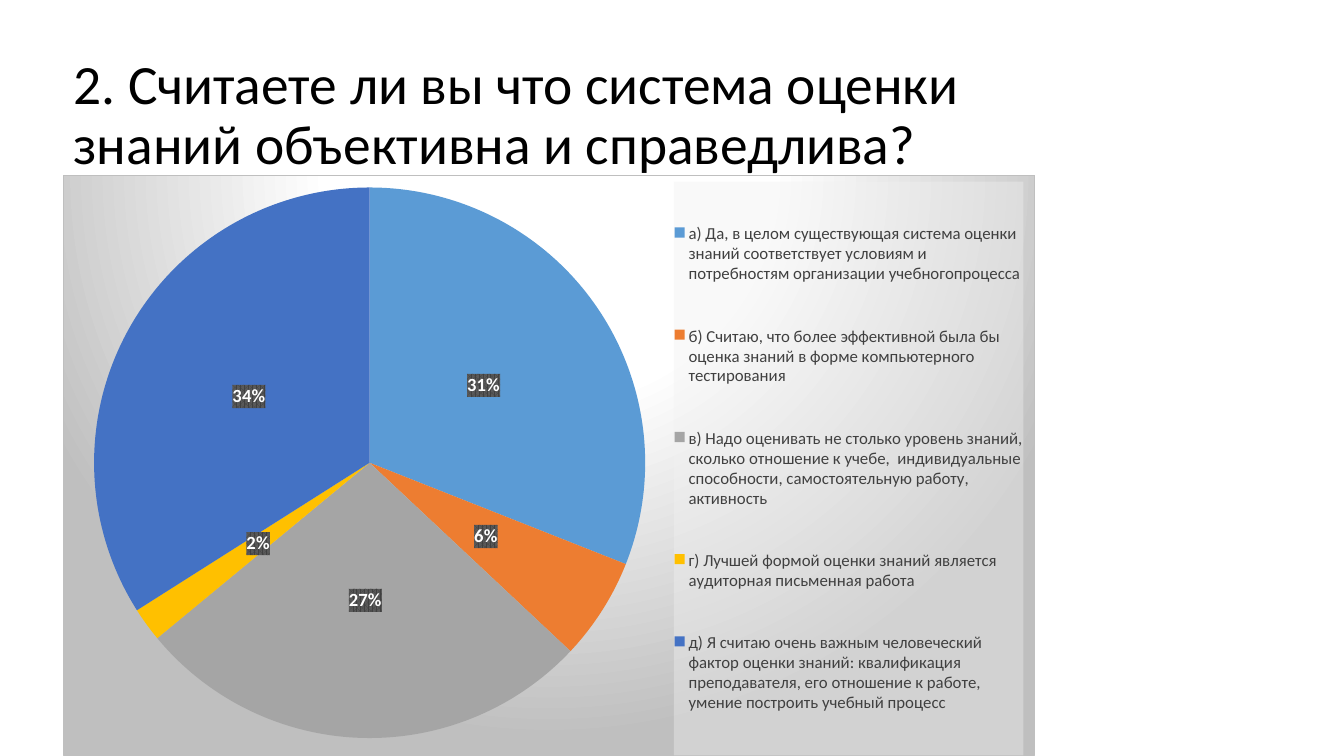
from dataclasses import dataclass

from pptx import Presentation
from pptx.chart.data import CategoryChartData
from pptx.dml.color import RGBColor
from pptx.enum.chart import XL_CHART_TYPE, XL_LABEL_POSITION, XL_LEGEND_POSITION
from pptx.enum.text import MSO_ANCHOR, MSO_AUTO_SIZE, PP_ALIGN
from pptx.oxml import parse_xml
from pptx.oxml.ns import nsdecls, qn
from pptx.util import Inches, Pt

PIE = XL_CHART_TYPE.PIE
LABEL_CENTER = XL_LABEL_POSITION.CENTER
LEGEND_RIGHT = XL_LEGEND_POSITION.RIGHT
MIDDLE = MSO_ANCHOR.MIDDLE
NO_AUTOFIT = MSO_AUTO_SIZE.NONE
LEFT = PP_ALIGN.LEFT
TITLE_ONLY = 5


@dataclass(frozen=True)
class Theme:
    font: str = "Calibri"
    text: str = "000000"
    legend_text: str = "404040"
    legend_fill: str = "F2F2F2"
    label_text: str = "FFFFFF"
    label_dark: str = "404040"
    label_light: str = "595959"
    panel_center: str = "FFFFFF"
    panel_edge: str = "BFBFBF"
    slices: tuple = ("5B9BD5", "ED7D31", "A5A5A5", "FFC000", "4472C4")
    title_size: float = 39.6
    chart_size: float = 10
    legend_size: float = 12
    label_size: float = 13.3


THEME = Theme()
SLIDE_WIDTH, SLIDE_HEIGHT = Inches(13.33), Inches(7.5)

TITLE_AREA = (4.72, 4.4, 69.9, 22)
CHART_AREA = (4.72, 23.2, 72.3, 76.8)
PIE_AREA = (0.03, 0.02, 0.57, 0.95)
LEGEND_AREA = (0.63, 0.01, 0.36, 0.99)

QUESTION = "2. Считаете ли вы что система оценки знаний объективна и справедлива?"
ANSWERS = {
    "а) Да, в целом существующая система оценки знаний соответствует условиям "
    "и потребностям организации учебногопроцесса": 31,
    "б) Считаю, что более эффективной была бы оценка знаний в форме "
    "компьютерного  тестирования": 6,
    "в) Надо оценивать не столько уровень знаний, сколько отношение к учебе,  "
    "индивидуальные способности, самостоятельную работу, активность": 27,
    "г) Лучшей формой оценки знаний является аудиторная письменная работа": 2,
    "д) Я считаю очень важным человеческий фактор оценки знаний: квалификация  "
    "преподавателя, его отношение к работе, умение построить учебный процесс": 34,
}


def place(area):
    sides = (SLIDE_WIDTH, SLIDE_HEIGHT) * 2
    return [round(side * percent / 100) for side, percent in zip(sides, area)]


def style_font(font, size, color, bold=False):
    font.name = THEME.font
    font.size = Pt(size)
    font.bold = bold
    font.color.rgb = RGBColor.from_string(color)


def solid(color, alpha=100):
    return (f'<a:solidFill><a:srgbClr val="{color}"><a:alpha val="{alpha * 1000}"/>'
            '</a:srgbClr></a:solidFill>')


def shape_format(content):
    return parse_xml(f'<c:spPr {nsdecls("c", "a")}>{content}</c:spPr>')


def manual_layout(area, inner=False):
    target = '<c:layoutTarget val="inner"/>' if inner else ""
    modes = "".join(f'<c:{side}Mode val="edge"/>' for side in "xy")
    shares = "".join(f'<c:{side} val="{share}"/>' for side, share in zip("xywh", area))
    return parse_xml(f'<c:layout {nsdecls("c")}><c:manualLayout>{target}{modes}{shares}'
                     '</c:manualLayout></c:layout>')


def remove_layout(parent):
    for layout in parent.findall(qn("c:layout")):
        parent.remove(layout)


def add_title(slide):
    title = slide.shapes.title
    title.left, title.top, title.width, title.height = place(TITLE_AREA)
    frame = title.text_frame
    frame.text = QUESTION
    frame.word_wrap = True
    frame.auto_size = NO_AUTOFIT
    frame.vertical_anchor = MIDDLE
    paragraph = frame.paragraphs[0]
    paragraph.alignment = LEFT
    paragraph.line_spacing = 0.9
    style_font(paragraph.runs[0].font, THEME.title_size, THEME.text)


def style_panel(chart):
    stops = ((0, THEME.panel_center), (39, THEME.panel_center), (100, THEME.panel_edge))
    gradient = "".join(f'<a:gs pos="{share * 1000}"><a:srgbClr val="{color}"/></a:gs>'
                       for share, color in stops)
    panel = shape_format(
        f'<a:gradFill><a:gsLst>{gradient}</a:gsLst><a:path path="circle">'
        '<a:fillToRect l="50000" t="-80000" r="50000" b="180000"/></a:path></a:gradFill>'
        f'<a:ln w="{Pt(0.75)}">{solid(THEME.panel_edge)}</a:ln>')
    chart.element.find(qn("c:chart")).addnext(panel)


def style_slices(plot):
    plot.vary_by_categories = True
    for index, color in enumerate(THEME.slices):
        fill = plot.series[0].points[index].format.fill
        fill.solid()
        fill.fore_color.rgb = RGBColor.from_string(color)


def style_labels(labels):
    labels.show_percentage = True
    labels.show_value = False
    labels.number_format = "0%"
    labels.number_format_is_linked = False
    labels.position = LABEL_CENTER
    style_font(labels.font, THEME.label_size, THEME.label_text, bold=True)


def style_legend(chart):
    chart.has_legend = True
    chart.legend.position = LEGEND_RIGHT
    chart.legend.include_in_layout = False
    style_font(chart.legend.font, THEME.legend_size, THEME.legend_text)
    legend = chart.element.find(".//" + qn("c:legend"))
    remove_layout(legend)
    legend.find(qn("c:legendPos")).addnext(manual_layout(LEGEND_AREA))
    legend.find(qn("c:txPr")).addprevious(shape_format(solid(THEME.legend_fill, 39)))


def add_answers_pie(slide):
    data = CategoryChartData()
    data.categories = list(ANSWERS)
    data.add_series("Series 1", list(ANSWERS.values()))
    chart = slide.shapes.add_chart(PIE, *place(CHART_AREA), data).chart
    chart.has_title = False
    style_font(chart.font, THEME.chart_size, THEME.text)
    style_panel(chart)
    style_legend(chart)

    plot = chart.plots[0]
    style_slices(plot)
    style_labels(plot.series[0].data_labels)
    label_box = shape_format(
        f'<a:pattFill prst="pct75"><a:fgClr><a:srgbClr val="{THEME.label_dark}"/></a:fgClr>'
        f'<a:bgClr><a:srgbClr val="{THEME.label_light}"/></a:bgClr></a:pattFill>')
    labels = chart.element.find(".//" + qn("c:ser") + "/" + qn("c:dLbls"))
    labels.find(qn("c:txPr")).addprevious(label_box)

    plot_area = chart.element.find(".//" + qn("c:plotArea"))
    remove_layout(plot_area)
    plot_area.insert(0, manual_layout(PIE_AREA, inner=True))


def main():
    presentation = Presentation()
    presentation.slide_width = SLIDE_WIDTH
    presentation.slide_height = SLIDE_HEIGHT
    slide = presentation.slides.add_slide(presentation.slide_layouts[TITLE_ONLY])
    add_title(slide)
    add_answers_pie(slide)
    presentation.save("out.pptx")


if __name__ == "__main__":
    main()
